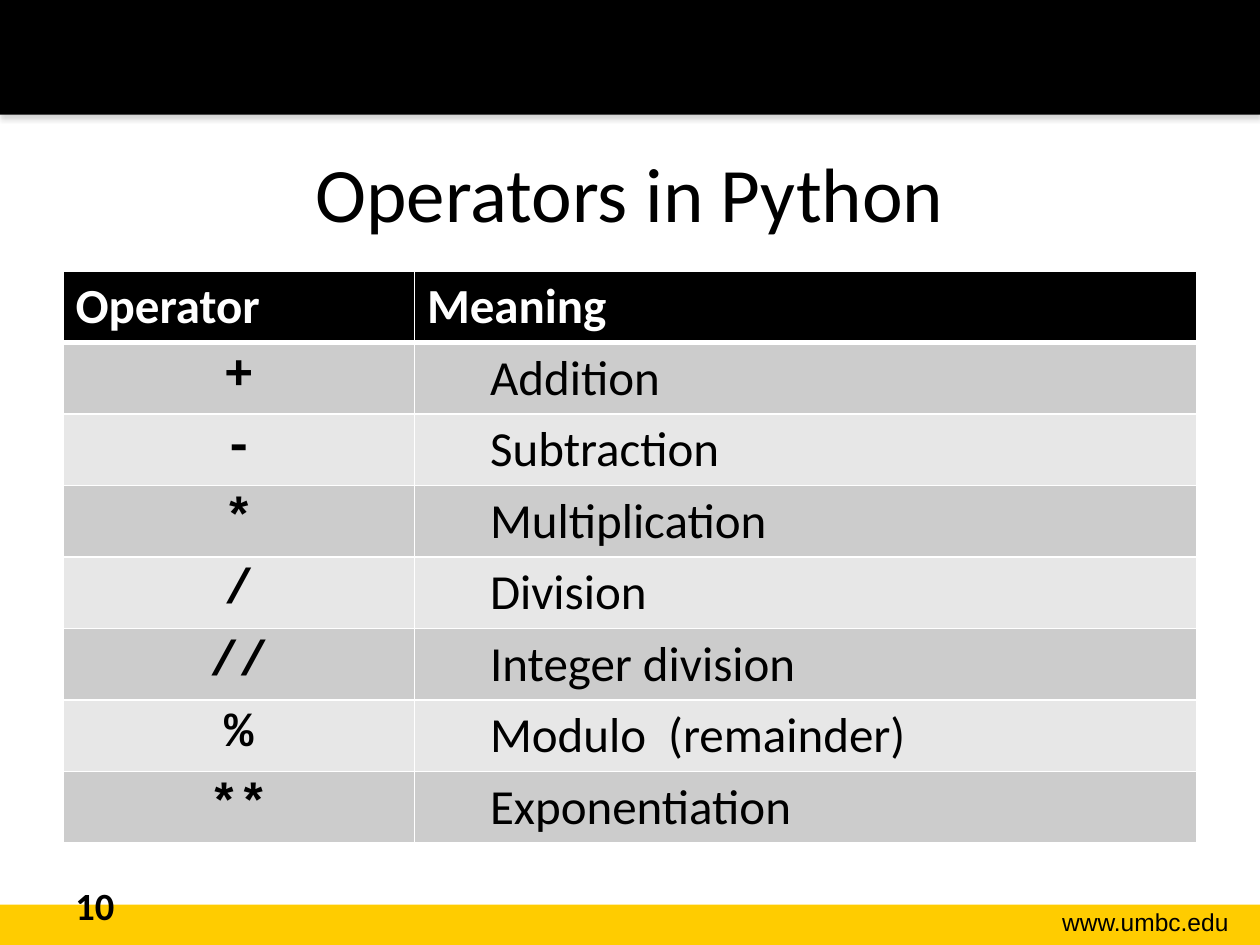
from lxml import etree
from pptx import Presentation
from pptx.dml.color import RGBColor as RGB
from pptx.enum.shapes import MSO_SHAPE as SHAPE
from pptx.enum.text import MSO_ANCHOR as ANCHOR, PP_ALIGN as ALIGN
from pptx.oxml.ns import qn
from pptx.util import Inches, Pt

W, H = 10, 7.5
COLORS = {"black": "000000", "gold": "FFCC00", "white": "FFFFFF",
          "odd": "CCCCCC", "even": "E7E7E7", "shadow": "808080"}
OPERATORS = [("+", "Addition"), ("-", "Subtraction"), ("*", "Multiplication"),
             ("/", "Division"), ("//", "Integer division"),
             ("%", "Modulo  (remainder)"), ("**", "Exponentiation")]
HEADER = {"size": Pt(28), "name": "Calibri", "bold": True}
SYMBOL = {"size": Pt(28), "name": "Courier New", "bold": True}
MEANING = {"size": Pt(28), "name": "Calibri", "bold": False}
TITLE = {"size": Pt(44), "name": "Calibri"}
ADDRESS = {"size": Pt(14), "name": "Arial"}
NUMBER = {"size": Pt(22), "name": "Calibri", "bold": True}


def rgb(key):
    """Return the named colour."""
    return RGB.from_string(COLORS[key])


def add_xml(parent, tag, **attrs):
    """Append a drawing element with its attributes."""
    return etree.SubElement(parent, qn(f"a:{tag}"), {k: str(v) for k, v in attrs.items()})


def write(tf, text, fmt, color="black", align=ALIGN.LEFT, tab=None):
    """Write one formatted paragraph into a text frame."""
    p = tf.paragraphs[0]
    p.alignment = align
    if tab:
        add_xml(add_xml(p._p.get_or_add_pPr(), "tabLst"), "tab", pos=Inches(tab), algn="l")
    r = p.add_run()
    r.text = text
    for name, value in fmt.items():
        setattr(r.font, name, value)
    r.font.color.rgb = rgb(color)


def add_band(s, box, color, shadow=False):
    """Draw a plain band across the box, with a soft shadow if asked."""
    sp = s.shapes.add_shape(SHAPE.RECTANGLE, *map(Inches, box))
    sp.shadow.inherit = False
    sp.fill.solid()
    sp.fill.fore_color.rgb = rgb(color)
    sp.line.fill.background()
    if shadow:
        effects = sp._element.spPr.find(qn("a:effectLst"))
        outer = add_xml(effects, "outerShdw", blurRad=Pt(3.1), dist=Pt(1.8),
                        dir=90 * 60000, rotWithShape=0)
        add_xml(add_xml(outer, "srgbClr", val=COLORS["shadow"]), "alpha", val=35000)


def add_label(s, box, text, fmt, align=ALIGN.LEFT, anchor=ANCHOR.TOP):
    """Place one line of text in the box."""
    tf = s.shapes.add_textbox(*map(Inches, box)).text_frame
    tf.word_wrap = True
    tf.vertical_anchor = anchor
    write(tf, text, fmt, align=align)


def style_cell(cell, fill, top, bottom):
    """Fill a cell and give it white borders of the given widths."""
    cell.fill.solid()
    cell.fill.fore_color.rgb = rgb(fill)
    tc_pr = cell._tc.get_or_add_tcPr()
    for i, (tag, width) in enumerate(zip(("lnL", "lnR", "lnT", "lnB"), (1, 1, top, bottom))):
        ln = add_xml(tc_pr, tag, w=Pt(width))
        add_xml(add_xml(ln, "solidFill"), "srgbClr", val=COLORS["white"])
        tc_pr.insert(i, ln)


def add_operator_table(s, box):
    """Build the table of operators and meanings in the box."""
    rows = [("Operator", "Meaning")] + OPERATORS
    table = s.shapes.add_table(len(rows), 2, *map(Inches, box)).table
    for col, share in zip(table.columns, (0.31, 0.69)):
        col.width = Inches(box[2] * share)
    for i, (symbol, meaning) in enumerate(rows):
        left, right = table.cell(i, 0), table.cell(i, 1)
        fill = "black" if i == 0 else "odd" if i % 2 else "even"
        for cell in (left, right):
            style_cell(cell, fill, 3 if i == 1 else 1, 3 if i == 0 else 1)
        if i == 0:
            write(left.text_frame, symbol, HEADER, "white")
            write(right.text_frame, meaning, HEADER, "white")
        else:
            write(left.text_frame, symbol, SYMBOL, align=ALIGN.CENTER)
            write(right.text_frame, "\t" + meaning, MEANING, tab=0.5)


def add_footer(s, box):
    """Draw the footer band with its web address and slide number."""
    x, y, w, h = box
    add_band(s, box, "gold")
    add_label(s, (x + w * 0.785, y - 0.03, w * 0.2, 0.34), "www.umbc.edu", ADDRESS, ALIGN.RIGHT)
    add_label(s, (x + w * 0.05, y - 0.23, w * 0.23, 0.4), "10", NUMBER)


def main():
    """Build and save the slide."""
    prs = Presentation()
    prs.slide_width, prs.slide_height = Inches(W), Inches(H)
    s = prs.slides.add_slide(prs.slide_layouts[6])
    margin = W * 0.05
    inner = W - 2 * margin
    add_band(s, (0, 0, W, 0.91), "black", shadow=True)
    add_label(s, (margin, H * 0.12, inner, H / 6), "Operators in Python", TITLE,
              ALIGN.CENTER, ANCHOR.MIDDLE)
    add_operator_table(s, (margin, 2.15, inner, 4.53))
    add_footer(s, (0, 7.18, W, 0.32))
    prs.save("out.pptx")


if __name__ == "__main__":
    main()
